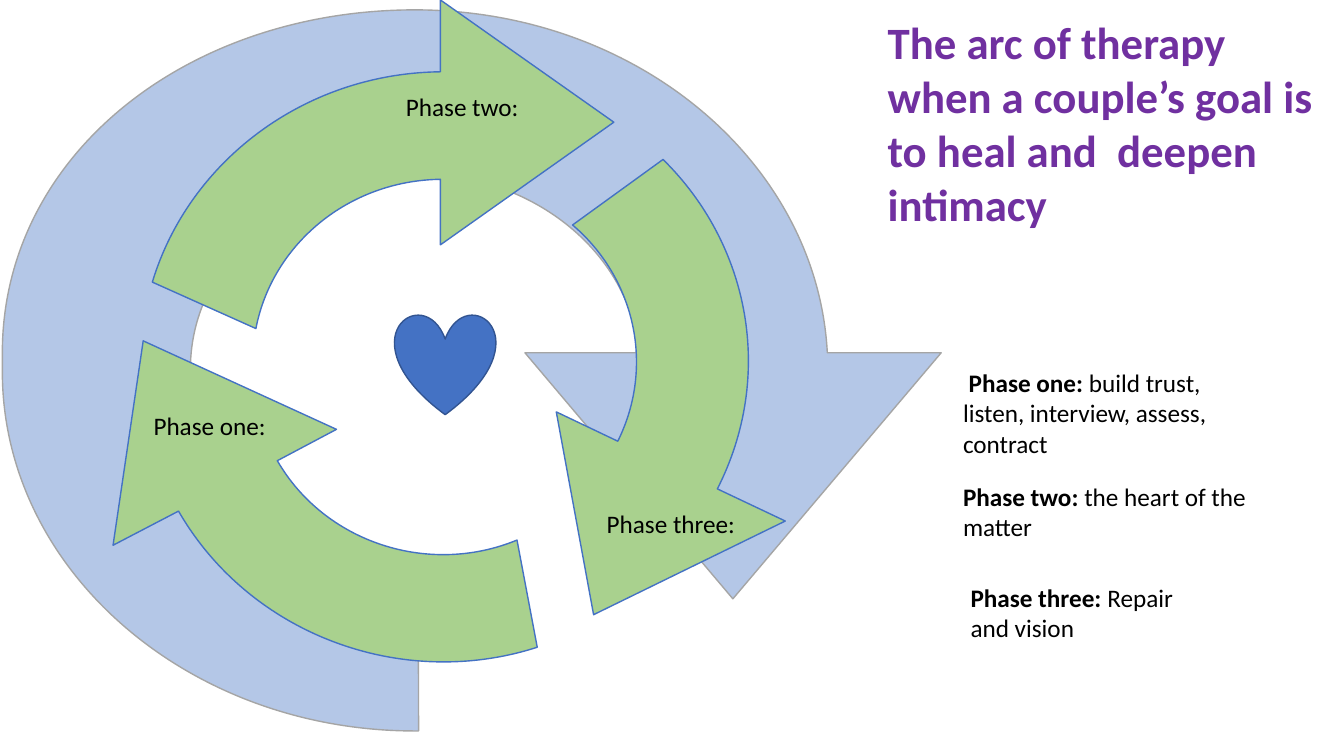
"""Build the slide on the arc of couple therapy and its three phases."""
from dataclasses import dataclass

from lxml.etree import SubElement
from pptx import Presentation
from pptx.dml.color import RGBColor
from pptx.enum.shapes import MSO_SHAPE as SHAPE
from pptx.oxml.ns import qn
from pptx.shapes.autoshape import Shape
from pptx.slide import Slide
from pptx.util import Cm, Pt

BLACK = RGBColor(0x00, 0x00, 0x00)
PURPLE = RGBColor(0x70, 0x30, 0xA0)
PALE_BLUE = RGBColor(0xB4, 0xC7, 0xE7)
GREEN = RGBColor(0xA9, 0xD1, 0x8E)
BLUE = RGBColor(0x44, 0x72, 0xC4)
DARK_BLUE = RGBColor(0x32, 0x54, 0x91)
GREY = RGBColor(0xA5, 0xA5, 0xA5)

FONT = "Calibri"

Contour = list[tuple[float, ...]]


@dataclass
class Outline:
    """Closed contours in cm: a pair is a corner, six numbers are a Bézier curve."""
    contours: list[Contour]
    fill: RGBColor
    line: RGBColor


@dataclass
class Label:
    """A text box in cm with a bold lead and a plain rest."""
    left: float
    top: float
    width: float
    height: float
    lead: str = ""
    rest: str = ""
    inset: float = 0.13
    size: int = 18
    color: RGBColor = BLACK


ARC = [
    (10.39, 0.25), (4.67, 0.28, 0.06, 3.94, 0.06, 8.89),
    (0.06, 9.37), (0.06, 14.35, 4.72, 18.42, 10.46, 18.42),
    (10.55, 18.42), (10.54, 14.3),
    (10.46, 14.3), (7.34, 14.3, 4.8, 12.09, 4.8, 9.37),
    (4.8, 9.22), (4.85, 6.55, 7.34, 4.39, 10.41, 4.37),
    (10.52, 4.37), (13.46, 4.39, 15.88, 6.38, 16.1, 8.89),
    (13.23, 8.89), (18.47, 15.09), (23.72, 8.89),
    (20.85, 8.89), (20.6, 4.11, 16.08, 0.28, 10.52, 0.25),
]
PHASE_ONE = [
    (3.61, 8.59), (2.85, 13.74), (4.5, 12.88),
    (5.89, 15.29, 8.5, 16.68, 11.18, 16.68),
    (11.97, 16.68, 12.77, 16.56, 13.54, 16.31),
    (13.03, 13.61), (10.8, 14.53, 8.18, 13.67, 6.99, 11.61),
    (8.48, 10.82),
]
PHASE_TWO = [
    (11.1, 0), (11.1, 1.81), (7.65, 1.85, 4.75, 4.09, 3.84, 7.11),
    (6.45, 8.28), (6.86, 6.15, 8.79, 4.55, 11.1, 4.52),
    (11.1, 6.17), (15.47, 3.08),
]
PHASE_THREE = [
    (16.71, 4.02), (14.43, 5.67), (16, 7.01, 16.51, 9.22, 15.57, 11.12),
    (14.02, 10.38), (14.96, 15.49), (19.79, 13.13),
    (18.08, 12.32), (19.53, 9.47, 18.9, 6.17, 16.71, 4.02),
]
OUTLINES = [
    Outline([ARC], PALE_BLUE, GREY),
    Outline([PHASE_TWO, PHASE_THREE, PHASE_ONE], GREEN, BLUE),
]
LABELS = [
    Label(22.12, 0.25, 11.76, 5.74, size=32, color=PURPLE,
          lead="The arc of therapy when a couple’s goal is to heal and  deepen intimacy"),
    Label(3.62, 7.9, 4.67, 4.11, rest="Phase one:", inset=2.45),
    Label(9.98, 2.18, 3.81, 1.02, rest="Phase two:"),
    Label(15.04, 12.69, 6.53, 1.02, rest="Phase three:"),
    Label(24.21, 14.55, 6.5, 1.8, "Phase three: ", "Repair and vision"),
    Label(24.02, 10.44, 7.65, 3.33, "Phase two: ", "the heart of the matter", 1.68),
    Label(24.02, 6.81, 8.56, 4.88, " Phase one: ",
          "build trust,\vlisten, interview, assess, contract", 2.45),
]


def paint(sp: Shape, fill: RGBColor, line: RGBColor) -> None:
    """Give a shape a flat fill and a thin line."""
    sp.shadow.inherit = False
    sp.fill.solid()
    sp.fill.fore_color.rgb = fill
    sp.line.color.rgb = line
    sp.line.width = Pt(1)


def bend(sp: Shape, contours: list[Contour]) -> None:
    """Turn the straight segments that stand for curves into Bézier curves."""
    segments = list(sp.element.iter(qn("a:lnTo")))
    steps = [step for contour in contours for step in contour[1:]]
    for segment, step in zip(segments, steps):
        if len(step) == 2:
            continue
        curve = SubElement(segment.getparent(), qn("a:cubicBezTo"))
        for x, y in zip(step[::2], step[1::2]):
            SubElement(curve, qn("a:pt"),
                       x=str(Cm(x) - sp.left), y=str(Cm(y) - sp.top))
        segment.getparent().replace(segment, curve)


def add_outline(s: Slide, outline: Outline) -> None:
    """Draw all contours of an outline as one freeform."""
    first, *others = [[(Cm(step[-2]), Cm(step[-1])) for step in contour]
                      for contour in outline.contours]
    builder = s.shapes.build_freeform(*first[0])
    builder.add_line_segments(first[1:], close=True)
    for points in others:
        builder.move_to(*points[0])
        builder.add_line_segments(points[1:], close=True)
    sp = builder.convert_to_shape()
    bend(sp, outline.contours)
    paint(sp, outline.fill, outline.line)


def add_label(s: Slide, label: Label) -> None:
    """Draw a text box whose lead is bold."""
    box = s.shapes.add_textbox(Cm(label.left), Cm(label.top),
                               Cm(label.width), Cm(label.height))
    tf = box.text_frame
    tf.word_wrap = True
    tf.margin_top = Cm(label.inset)
    p = tf.paragraphs[0]
    p.font.name = FONT
    p.font.size = Pt(label.size)
    p.font.color.rgb = label.color
    if not label.rest:
        p.font.bold = True
    if label.lead:
        r = p.add_run()
        r.text = label.lead
        if label.rest:
            r.font.bold = True
    for i, part in enumerate(label.rest.split("\v") if label.rest else []):
        if i:
            p.add_line_break()
        p.add_run().text = part


def main() -> None:
    """Assemble and save the slide."""
    prs = Presentation()
    prs.slide_width, prs.slide_height = Cm(33.87), Cm(19.05)
    s = prs.slides.add_slide(prs.slide_layouts[6])
    for outline in OUTLINES:
        add_outline(s, outline)
    for label in LABELS:
        add_label(s, label)
    heart = s.shapes.add_shape(SHAPE.HEART, Cm(9.95), Cm(7.91), Cm(2.54), Cm(2.54))
    paint(heart, BLUE, DARK_BLUE)
    prs.save("out.pptx")


if __name__ == "__main__":
    main()
